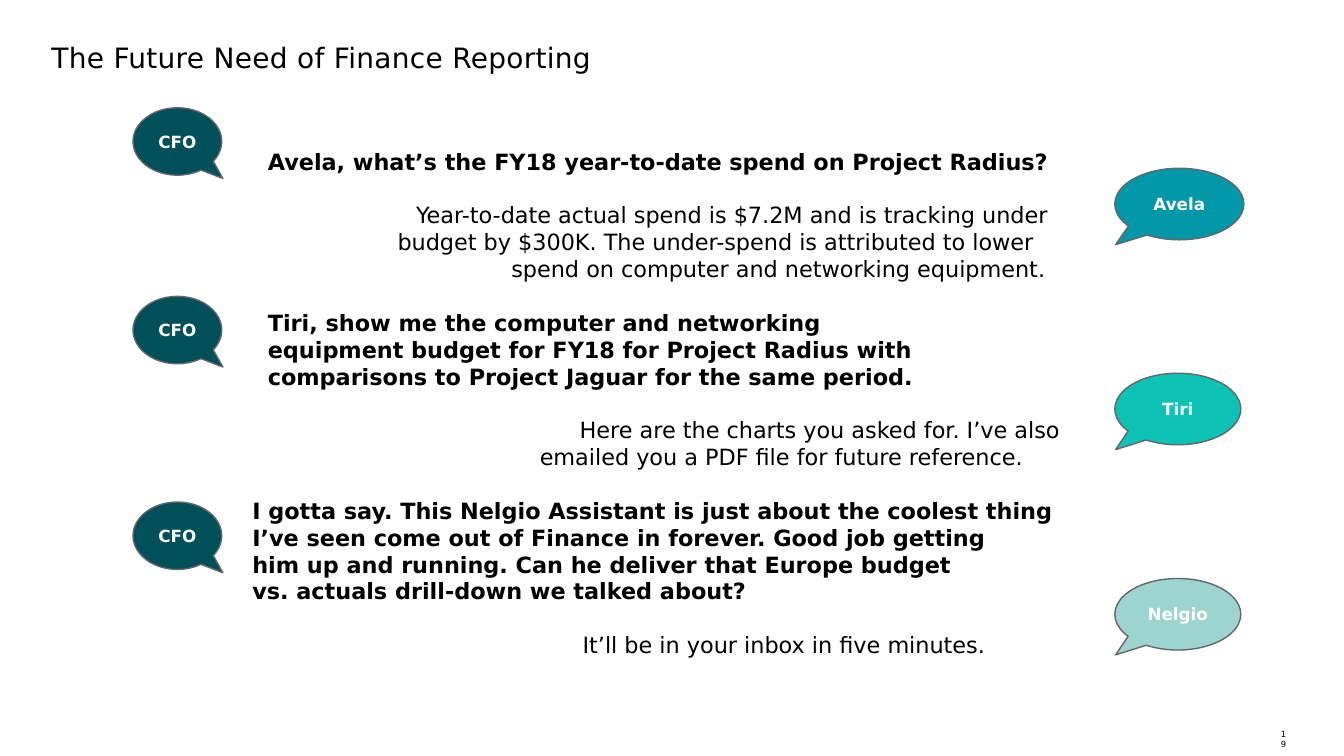
from pptx import Presentation
from pptx.dml.color import RGBColor
from pptx.enum.shapes import MSO_SHAPE
from pptx.enum.text import MSO_ANCHOR, PP_ALIGN
from pptx.util import Pt


def color(code):
    return RGBColor.from_string(code)


class Deck:
    face = "DejaVu Sans"
    ink = "000000"
    edge = "63666A"

    def __init__(self, wide, high):
        self.file = Presentation()
        self.file.slide_width, self.file.slide_height = Pt(wide), Pt(high)
        self.slide = self.file.slides.add_slide(self.file.slide_layouts[6])

    def words(self, para, text, ink=ink, **form):
        run = para.add_run()
        run.text = text
        run.font.color.rgb = color(ink)
        for key, value in {"name": self.face, **form}.items():
            setattr(run.font, key, value)
        return run

    def box(self, *place, inset=None):
        frame = self.slide.shapes.add_textbox(*map(Pt, place)).text_frame
        frame.word_wrap = True
        if inset is not None:
            for side in ("left", "top", "right", "bottom"):
                setattr(frame, "margin_" + side, Pt(inset))
        return frame

    def title(self, text, *place):
        para = self.box(*place, inset=0).paragraphs[0]
        para.line_spacing = 0.9
        run = self.words(para, text, size=Pt(20))
        run.font._element.set("spc", "20")

    def label(self, text, *place):
        self.words(self.box(*place).paragraphs[0], text, size=Pt(6))

    def talk(self, turns, pitch, *place):
        frame = self.box(*place)
        for turn, (bold, lines) in enumerate(turns):
            for row, (indent, text) in enumerate(lines):
                first = turn == row == 0
                para = frame.paragraphs[0] if first else frame.add_paragraph()
                para.line_spacing = Pt(pitch)
                if turn and row == 0:
                    para.space_before = Pt(pitch)
                props = para._p.get_or_add_pPr()
                props.set("marL", str(Pt(indent)))
                props.set("indent", "0")
                self.words(para, text, size=Pt(16), bold=bold)

    def bubble(self, text, fill, tail, *place):
        shape = self.slide.shapes.add_shape(
            MSO_SHAPE.OVAL_CALLOUT, *map(Pt, place))
        shape.shadow.inherit = False
        for spot, value in enumerate(tail):
            shape.adjustments[spot] = value
        shape.fill.solid()
        shape.fill.fore_color.rgb = color(fill)
        shape.line.color.rgb = color(self.edge)
        shape.line.width = Pt(1)
        frame = shape.text_frame
        frame.word_wrap = True
        frame.vertical_anchor = MSO_ANCHOR.MIDDLE
        para = frame.paragraphs[0]
        para.alignment = PP_ALIGN.CENTER
        self.words(para, text, "FFFFFF", size=Pt(12), bold=True)


# Dialogue: bold questions and plain answers, each line with its indent
ASK, LAST = 105.8, 94.7
TURNS = [
    (True, [(ASK, "Avela, what’s the FY18 year-to-date spend on Project Radius?")]),
    (False, [
        (211.6, "Year-to-date actual spend is $7.2M and is tracking under"),
        (198.4, "budget by $300K. The under-spend is attributed to lower"),
        (279.7, "spend on computer and networking equipment."),
    ]),
    (True, [
        (ASK, "Tiri, show me the computer and networking"),
        (ASK, "equipment budget for FY18 for Project Radius with"),
        (ASK, "comparisons to Project Jaguar for the same period."),
    ]),
    (False, [
        (328.5, "Here are the charts you asked for. I’ve also"),
        (300, "emailed you a PDF file for future reference."),
    ]),
    (True, [
        (LAST, "I gotta say. This Nelgio Assistant is just about the coolest thing"),
        (LAST, "I’ve seen come out of Finance in forever. Good job getting"),
        (LAST, "him up and running. Can he deliver that Europe budget"),
        (LAST, "vs. actuals drill-down we talked about?"),
    ]),
    (False, [(330.6, "It’ll be in your inbox in five minutes.")]),
]

# Speakers on the right: name, fill, top, width
HELPERS = [
    ("Avela", "0097A9", 120.2, 92.2),
    ("Tiri", "0BC2B4", 266.6, 90),
    ("Nelgio", "9DD4CF", 413.2, 90),
]


def main():
    deck = Deck(960, 540)

    # Heading and page number
    deck.title("The Future Need of Finance Reporting", 36.7, 31.7, 886.3, 21.6)
    deck.label("19", 907.9, 517, 18.7, 14.4)

    # Conversation
    deck.talk(TURNS, 19.2, 78.5, 102, 815.8, 372)

    # Speech bubbles
    for top in (77, 211.7, 358.6):
        deck.bubble("CFO", "004F59", (0.513, 0.549), 95, top, 63.4, 48.2)
    for name, fill, top, wide in HELPERS:
        deck.bubble(name, fill, (-0.494, 0.568), 796.3, top, wide, 51.1)

    deck.file.save("out.pptx")


if __name__ == "__main__":
    main()
